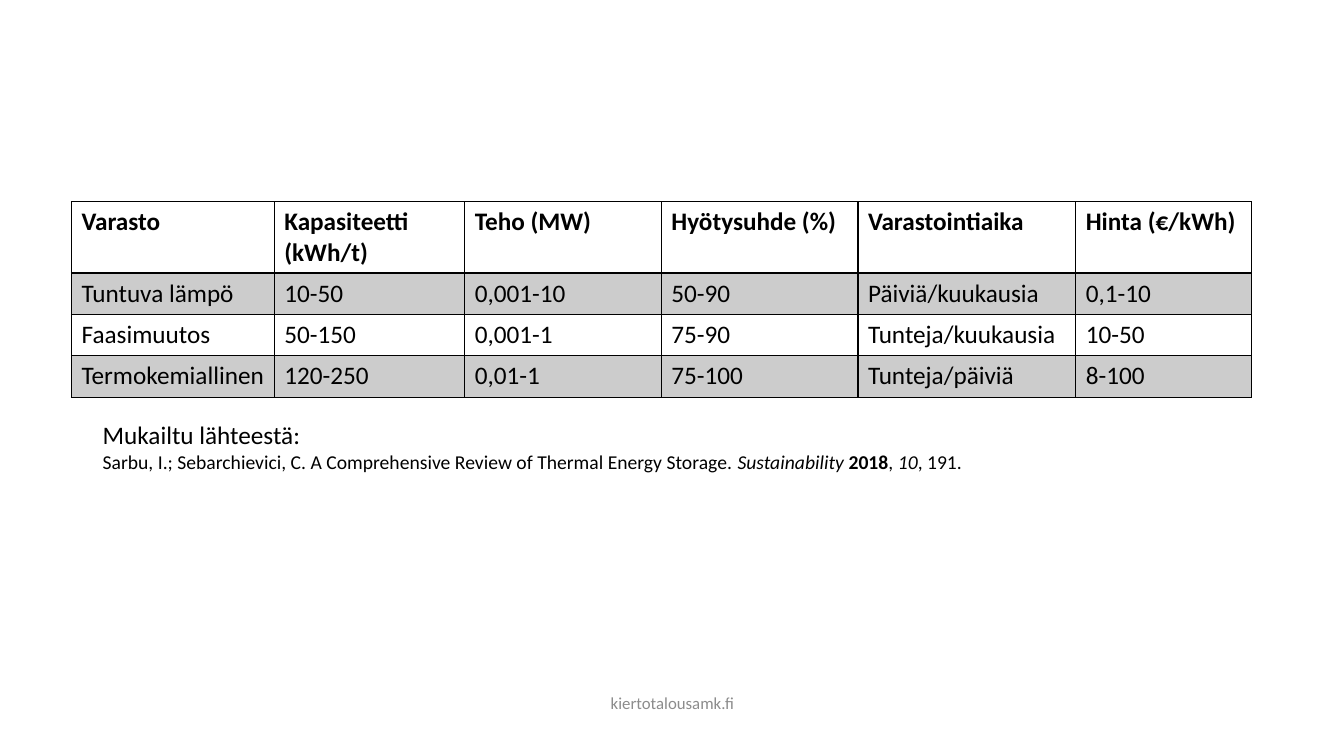
import lxml.etree
import pptx
import pptx.dml.color
import pptx.enum.text
import pptx.oxml.ns
import pptx.util

Inches = pptx.util.Inches
qn = pptx.oxml.ns.qn

COLORS = {"ink": "000000", "footer": "8C8C8C"}
FONT = "Calibri"
BAND_OPACITY = 20
COLUMN_WIDTHS = [2.01, 1.89, 1.95, 1.95, 2.16, 1.74]
HEADER_HEIGHT = 0.69
ROW_HEIGHT = 0.41
STORAGE_ROWS = [
    ["Varasto", "Kapasiteetti (kWh/t)", "Teho (MW)", "Hyötysuhde (%)", "Varastointiaika", "Hinta (€/kWh)"],
    ["Tuntuva lämpö", "10-50", "0,001-10", "50-90", "Päiviä/kuukausia", "0,1-10"],
    ["Faasimuutos", "50-150", "0,001-1", "75-90", "Tunteja/kuukausia", "10-50"],
    ["Termokemiallinen", "120-250", "0,01-1", "75-100", "Tunteja/päiviä", "8-100"],
]
CITATION = [
    ("Sarbu, I.; Sebarchievici, C. A Comprehensive Review of Thermal Energy Storage. ", {}),
    ("Sustainability ", {"italic": True}),
    ("2018", {"bold": True}),
    (", ", {}),
    ("10", {"italic": True}),
    (", 191.", {}),
]


def rgb(name):
    return pptx.dml.color.RGBColor.from_string(COLORS[name])


def add_text(paragraph, text, size=18, color="ink", bold=False, italic=False):
    run = paragraph.add_run()
    run.text = text
    run.font.name = FONT
    run.font.size = pptx.util.Pt(size)
    run.font.bold = bold
    run.font.italic = italic
    run.font.color.rgb = rgb(color)


def add_text_box(slide, left, top, width, height):
    text_box = slide.shapes.add_textbox(Inches(left), Inches(top), Inches(width), Inches(height))
    text_box.text_frame.word_wrap = True
    return text_box.text_frame


def set_border(cell, side, width):
    properties = cell._tc.get_or_add_tcPr()
    line = lxml.etree.SubElement(properties, qn(f"a:ln{side}"), w=str(pptx.util.Pt(width)))
    fill = lxml.etree.SubElement(line, qn("a:solidFill"))
    lxml.etree.SubElement(fill, qn("a:srgbClr"), val=COLORS["ink"])


def fill_cell(cell, banded):
    if not banded:
        cell.fill.background()
        return
    cell.fill.solid()
    cell.fill.fore_color.rgb = rgb("ink")
    color = cell._tc.tcPr.find(f"{qn('a:solidFill')}/{qn('a:srgbClr')}")
    lxml.etree.SubElement(color, qn("a:alpha"), val=str(BAND_OPACITY * 1000))


def add_storage_table(slide, left, top):
    width = sum(COLUMN_WIDTHS)
    height = HEADER_HEIGHT + ROW_HEIGHT * (len(STORAGE_ROWS) - 1)
    table = slide.shapes.add_table(
        len(STORAGE_ROWS), len(COLUMN_WIDTHS),
        Inches(left), Inches(top), Inches(width), Inches(height),
    ).table
    for column, column_width in zip(table.columns, COLUMN_WIDTHS):
        column.width = Inches(column_width)
    for row_index, values in enumerate(STORAGE_ROWS):
        is_header = row_index == 0
        table.rows[row_index].height = Inches(HEADER_HEIGHT if is_header else ROW_HEIGHT)
        widths = {"L": 1, "R": 1, "T": 2 if row_index == 1 else 1, "B": 2 if is_header else 1}
        for column_index, value in enumerate(values):
            cell = table.cell(row_index, column_index)
            add_text(cell.text_frame.paragraphs[0], value, bold=is_header)
            for side, border_width in widths.items():
                set_border(cell, side, border_width)
            fill_cell(cell, banded=row_index % 2 == 1)


def add_reference(slide, left, top, width, height):
    text_frame = add_text_box(slide, left, top, width, height)
    text_frame.auto_size = pptx.enum.text.MSO_AUTO_SIZE.SHAPE_TO_FIT_TEXT
    add_text(text_frame.paragraphs[0], "Mukailtu lähteestä:")
    citation = text_frame.add_paragraph()
    for text, style in CITATION:
        add_text(citation, text, size=14, **style)


def add_footer(slide, left, top, width, height):
    text_frame = add_text_box(slide, left, top, width, height)
    text_frame.vertical_anchor = pptx.enum.text.MSO_ANCHOR.MIDDLE
    paragraph = text_frame.paragraphs[0]
    paragraph.alignment = pptx.enum.text.PP_ALIGN.CENTER
    add_text(paragraph, "kiertotalousamk.fi", size=12, color="footer")


def main():
    presentation = pptx.Presentation()
    presentation.slide_width = Inches(13.33)
    presentation.slide_height = Inches(7.5)
    slide = presentation.slides.add_slide(presentation.slide_layouts[6])
    add_storage_table(slide, 0.71, 2)
    add_footer(slide, 4.42, 6.77, 4.5, 0.4)
    add_reference(slide, 0.92, 4.11, 11.76, 0.64)
    presentation.save("out.pptx")


if __name__ == "__main__":
    main()
